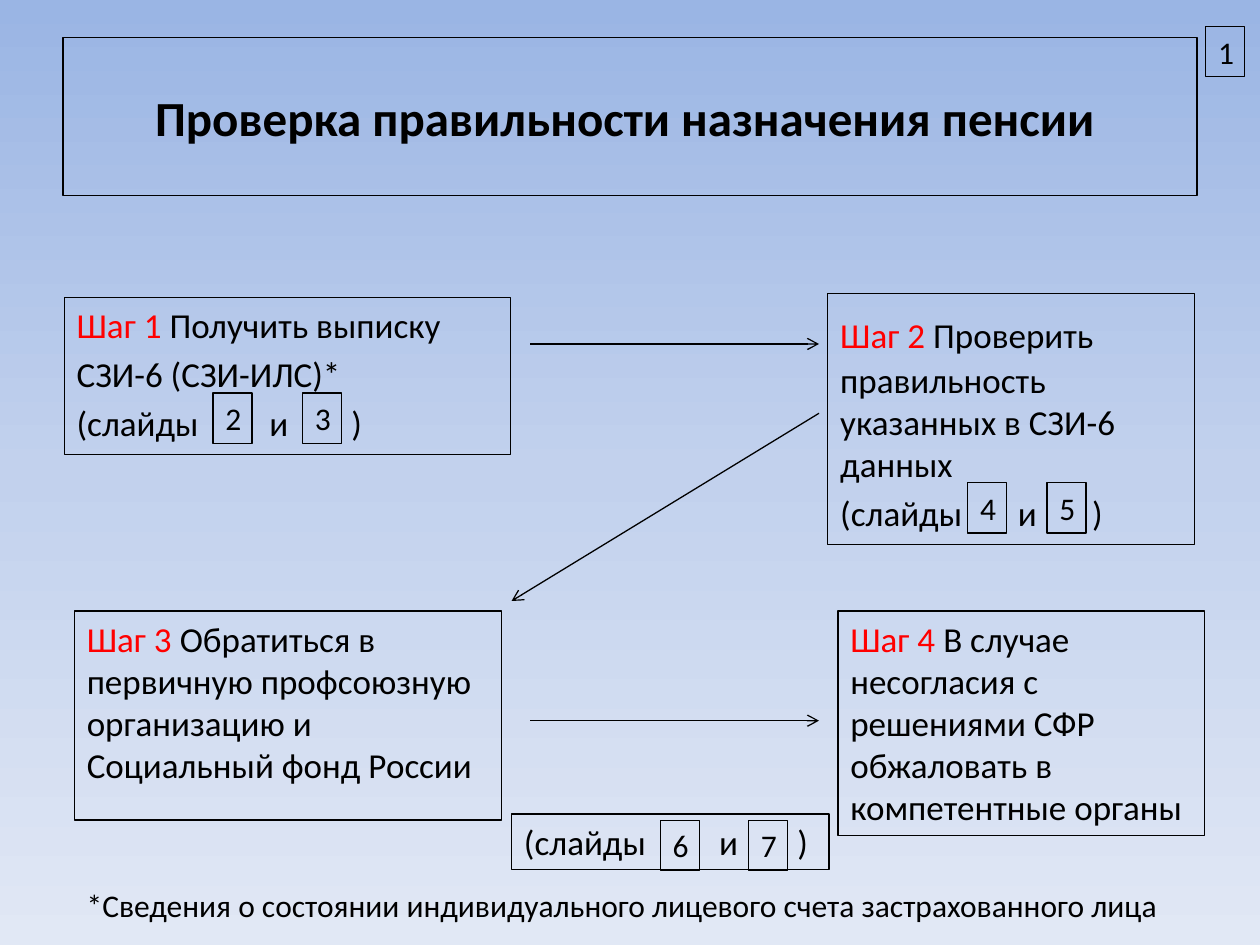
from copy import deepcopy

from lxml.etree import SubElement
from pptx import Presentation
from pptx.dml.color import RGBColor
from pptx.enum.shapes import MSO_CONNECTOR as Connector
from pptx.enum.text import MSO_ANCHOR as Anchor, MSO_AUTO_SIZE as AutoSize, PP_ALIGN as Align
from pptx.oxml.ns import qn
from pptx.util import Inches, Pt

COLORS = {"ink": "000000", "step": "FF0000",
          "sky_top": "9AB5E4", "sky_middle": "C2D1ED", "sky_bottom": "E1E8F5"}


class StepSlide:
    """Holds the style and the current slide, and draws each kind of element."""

    font_name = "Calibri"
    line_width = Pt(0.75)

    def __init__(self, deck):
        self.slide = deck.slides.add_slide(deck.slide_layouts[5])

    def color(self, name):
        return RGBColor.from_string(COLORS[name])

    def background(self, names):
        fill = self.slide.background.fill
        fill.gradient()
        fill.gradient_angle = 270
        stop_list = next(self.slide.element.iter(qn("a:gsLst")))
        stop_list.append(deepcopy(stop_list[-1]))
        for index, (stop, name) in enumerate(zip(fill.gradient_stops, names)):
            stop.position = index / (len(names) - 1)
            stop.color.rgb = self.color(name)

    def outline(self, item):
        item.line.color.rgb = self.color("ink")
        item.line.width = self.line_width

    def style(self, paragraph, size, bold=False):
        font = paragraph.font
        font.name, font.size, font.bold = self.font_name, Pt(size), bold
        font.color.rgb = self.color("ink")

    def title(self, text, left, top, width, height):
        heading = self.slide.shapes.title
        heading.left, heading.top = Inches(left), Inches(top)
        heading.width, heading.height = Inches(width), Inches(height)
        self.outline(heading)
        frame = heading.text_frame
        frame.text = text
        frame.vertical_anchor = Anchor.MIDDLE
        frame.paragraphs[0].alignment = Align.CENTER
        self.style(frame.paragraphs[0], 28, bold=True)

    def frame(self, left, top, width, height, bordered=True, wrap=True):
        box = self.slide.shapes.add_textbox(
            Inches(left), Inches(top), Inches(width), Inches(height))
        if bordered:
            self.outline(box)
        box.text_frame.word_wrap = wrap
        box.text_frame.auto_size = AutoSize.SHAPE_TO_FIT_TEXT
        return box.text_frame

    def badge(self, number, left, top):
        paragraph = self.frame(left, top, 0.31, 0.4, wrap=False).paragraphs[0]
        paragraph.text = str(number)
        self.style(paragraph, 18)

    def note(self, text, left, top, width, height):
        paragraph = self.frame(left, top, width, height, bordered=False).paragraphs[0]
        paragraph.text = text
        self.style(paragraph, 18)

    def step(self, place, lines, tabs=(), align=Align.LEFT):
        """Each line is a list of (text, color name or None, size or None)."""
        frame = self.frame(*place)
        for index, pieces in enumerate(lines):
            paragraph = frame.add_paragraph() if index else frame.paragraphs[0]
            paragraph.alignment = align
            paragraph.space_before = Pt(4)
            if any("\t" in text for text, _, _ in pieces):
                self.tab_stops(paragraph, tabs)
            self.style(paragraph, 20)
            for text, color_name, size in pieces:
                run = paragraph.add_run()
                run.text = text
                if color_name:
                    run.font.color.rgb = self.color(color_name)
                if size:
                    run.font.size = Pt(size)

    def tab_stops(self, paragraph, positions):
        tab_list = SubElement(paragraph._p.get_or_add_pPr(), qn("a:tabLst"))
        for position in positions:
            SubElement(tab_list, qn("a:tab"), pos=str(Inches(position)), algn="l")

    def arrow(self, x1, y1, x2, y2):
        link = self.slide.shapes.add_connector(
            Connector.STRAIGHT, Inches(x1), Inches(y1), Inches(x2), Inches(y2))
        self.outline(link)
        SubElement(link.line._get_or_add_ln(), qn("a:tailEnd"), type="arrow")
        SubElement(link._element.spPr, qn("a:effectLst"))


def plain(text):
    return text, None, None


def lead(number):
    return f"Шаг {number} ", "step", None


def main():
    deck = Presentation()
    deck.slide_width, deck.slide_height = Inches(10), Inches(7.5)
    page = StepSlide(deck)
    page.background(["sky_top", "sky_middle", "sky_bottom"])
    page.title("Проверка правильности назначения пенсии ", 0.5, 0.3, 9, 1.25)

    slide_refs = [plain("(слайды\tи\t)")]
    page.step((0.51, 2.36, 3.54, 1.25),
              [[lead(1), plain("Получить выписку")], [plain("СЗИ-6 (СЗИ-ИЛС)*")], slide_refs],
              tabs=(1.53, 2.18), align=Align.JUSTIFY)
    page.step((6.57, 2.33, 2.91, 1.99),
              [[lead(2), plain("Проверить"), (" ", None, 28),
                plain("правильность указанных в СЗИ-6 данных")], slide_refs],
              tabs=(1.41, 2))
    page.step((0.59, 4.85, 3.39, 1.66),
              [[lead(3), plain("Обратиться в первичную профсоюзную организацию "
                               "и Социальный фонд России")]])
    page.step((6.65, 4.85, 2.91, 1.78),
              [[lead(4), plain("В случае несогласия с решениями СФР обжаловать "
                               "в компетентные органы")]])
    page.step((4.06, 6.46, 2.52, 0.44), [slide_refs], tabs=(1.55, 2.17), align=Align.JUSTIFY)

    for ends in [(4.21, 2.73, 6.5, 2.73), (6.5, 3.28, 4.06, 4.77), (4.21, 5.72, 6.5, 5.72)]:
        page.arrow(*ends)

    badge_places = [(9.57, 0.21), (1.69, 3.12), (2.4, 3.12), (7.68, 3.83),
                    (8.31, 3.83), (5.24, 6.51), (5.94, 6.51)]
    for number, place in enumerate(badge_places, start=1):
        page.badge(number, *place)

    page.note("*Сведения о состоянии индивидуального лицевого счета застрахованного лица",
              0.59, 6.98, 9.06, 0.4)
    deck.save("out.pptx")


if __name__ == "__main__":
    main()
